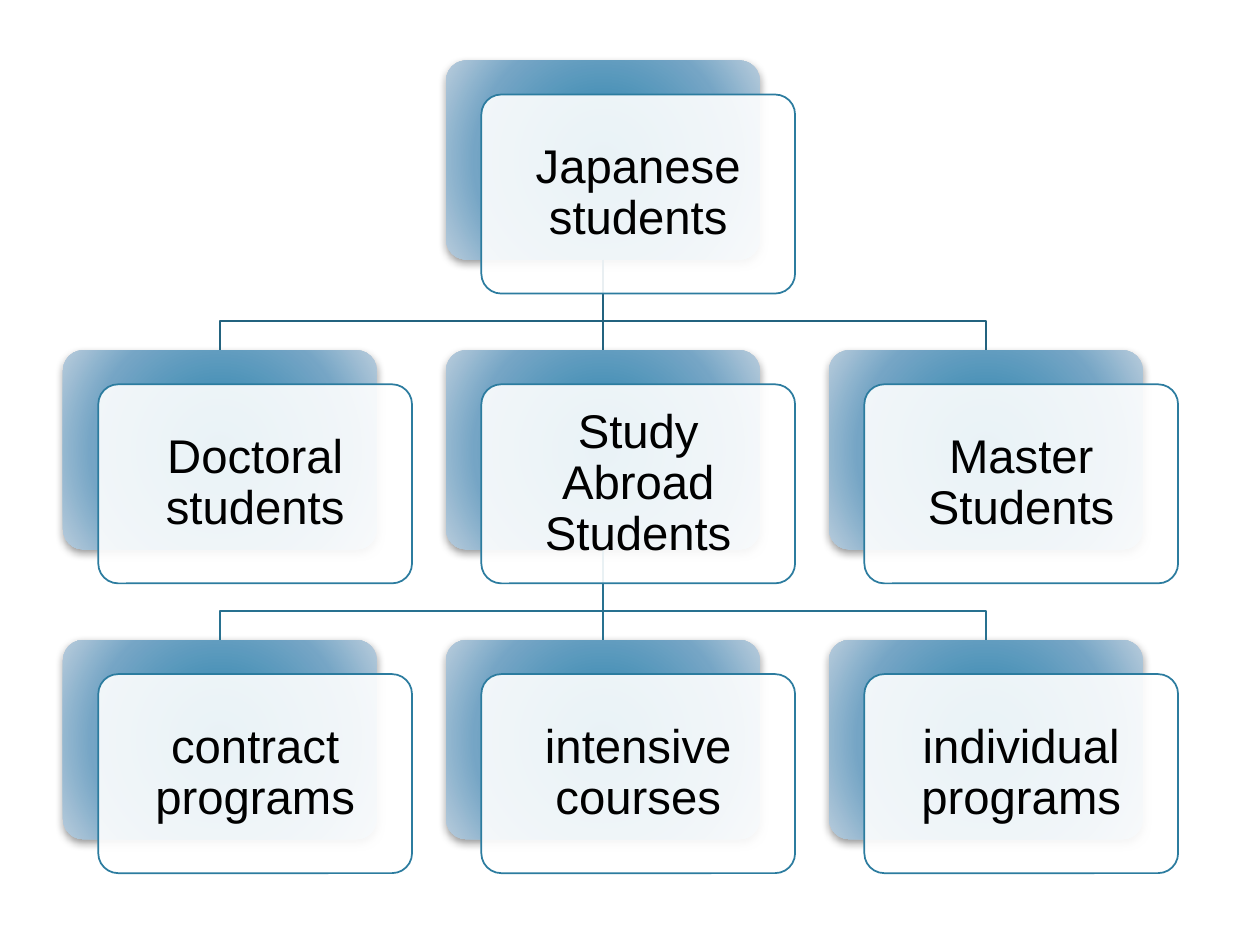
from pptx import Presentation
from pptx.dml.color import RGBColor
from pptx.enum.shapes import MSO_CONNECTOR as CONN, MSO_SHAPE as SHAPE
from pptx.enum.text import MSO_ANCHOR as ANCHOR, PP_ALIGN as ALIGN
from pptx.oxml import parse_xml
from pptx.oxml.ns import nsdecls
from pptx.util import Inches, Pt


def rgb(value):
    return RGBColor.from_string(value)


def add_xml(parent, xml):
    tag = xml[1:].split(">")[0].split()[0].rstrip("/")
    parent.append(parse_xml(xml.replace(tag, f"{tag} {nsdecls('a')}", 1)))


# Grid: column and row starts of the back cards
LEFT, TOP, COL, ROW = 0.5, 0.48, 3.04, 2.3
CARD_W, CARD_H = 2.49, 1.58
SHIFT_X, SHIFT_Y = 0.28, 0.27
BEND = 0.49

NODES = [
    (1, 0, "Japanese students"),
    (0, 1, "Doctoral students"),
    (1, 1, "Study Abroad Students"),
    (2, 1, "Master Students"),
    (0, 2, "contract programs"),
    (1, 2, "intensive courses"),
    (2, 2, "individual programs"),
]
LINE_COLORS = ["23637F", "287190"]
STOPS = [(0, "2080AB"), (69, "75A5C5"), (100, "B8CCDC")]

stops_xml = "".join(
    f'<a:gs pos="{pos * 1000}"><a:srgbClr val="{color}"/></a:gs>' for pos, color in STOPS)
GRADIENT = (
    f'<a:gradFill rotWithShape="1"><a:gsLst>{stops_xml}</a:gsLst><a:path path="circle">'
    '<a:fillToRect l="100000" t="100000" r="100000" b="100000"/></a:path></a:gradFill>')
SHADOW = (
    f'<a:effectLst><a:outerShdw blurRad="{Pt(5)}" dist="{Pt(2)}" dir="5400000" rotWithShape="0">'
    '<a:srgbClr val="000000"><a:alpha val="40000"/></a:srgbClr></a:outerShdw></a:effectLst>')

prs = Presentation()
prs.slide_width, prs.slide_height = Inches(10), Inches(7.5)
s = prs.slides.add_slide(prs.slide_layouts[6])

# Back cards
backs = {}
for col, row, label in NODES:
    sp = s.shapes.add_shape(
        SHAPE.ROUNDED_RECTANGLE, Inches(LEFT + col * COL), Inches(TOP + row * ROW),
        Inches(CARD_W), Inches(CARD_H))
    sp.adjustments[0] = 0.1
    add_xml(sp._element.spPr, GRADIENT)
    sp.line.fill.background()
    add_xml(sp._element.spPr, SHADOW)
    backs[col, row] = sp

# Branches from the middle card of each row to the row below
for row, color in enumerate(LINE_COLORS):
    parent = backs[1, row]
    x, y = parent.left + parent.width // 2, parent.top + parent.height
    stem = s.shapes.add_connector(CONN.STRAIGHT, x, y, x, backs[1, row + 1].top)
    stem.begin_connect(parent, 2)
    stem.end_connect(backs[1, row + 1], 0)
    add_xml(stem._element.spPr, "<a:effectLst/>")
    branches = [stem]
    for col in (0, 2):
        child = backs[col, row + 1]
        child_x, bend_y = child.left + child.width // 2, y + Inches(BEND)
        path = s.shapes.build_freeform(x, y)
        path.add_line_segments(
            [(x, bend_y), (child_x, bend_y), (child_x, child.top)], close=False)
        elbow = path.convert_to_shape()
        elbow.fill.background()
        elbow.shadow.inherit = False
        branches.append(elbow)
    for branch in branches:
        branch.line.color.rgb = rgb(color)
        branch.line.width = Pt(1)

# Front cards with labels
for col, row, label in NODES:
    back = backs[col, row]
    sp = s.shapes.add_shape(
        SHAPE.ROUNDED_RECTANGLE, back.left + Inches(SHIFT_X), back.top + Inches(SHIFT_Y),
        back.width, back.height)
    sp.adjustments[0] = 0.1
    sp.shadow.inherit = False
    sp.fill.solid()
    sp.fill.fore_color.rgb = rgb("FFFFFF")
    add_xml(sp._element.spPr.xpath("a:solidFill/a:srgbClr")[0], '<a:alpha val="90000"/>')
    sp.line.color.rgb = rgb("2C7C9F")
    sp.line.width = Pt(1)
    tf = sp.text_frame
    frame_format = {"word_wrap": True, "vertical_anchor": ANCHOR.MIDDLE}
    for side in ("left", "top", "right", "bottom"):
        frame_format[f"margin_{side}"] = Inches(0.11)
    for name, value in frame_format.items():
        setattr(tf, name, value)
    p = tf.paragraphs[0]
    p.alignment, p.line_spacing = ALIGN.CENTER, 0.9
    r = p.add_run()
    r.text = label
    for name, value in {"name": "Arial", "size": Pt(27)}.items():
        setattr(r.font, name, value)
    r.font.color.rgb = rgb("000000")

prs.save("out.pptx")
